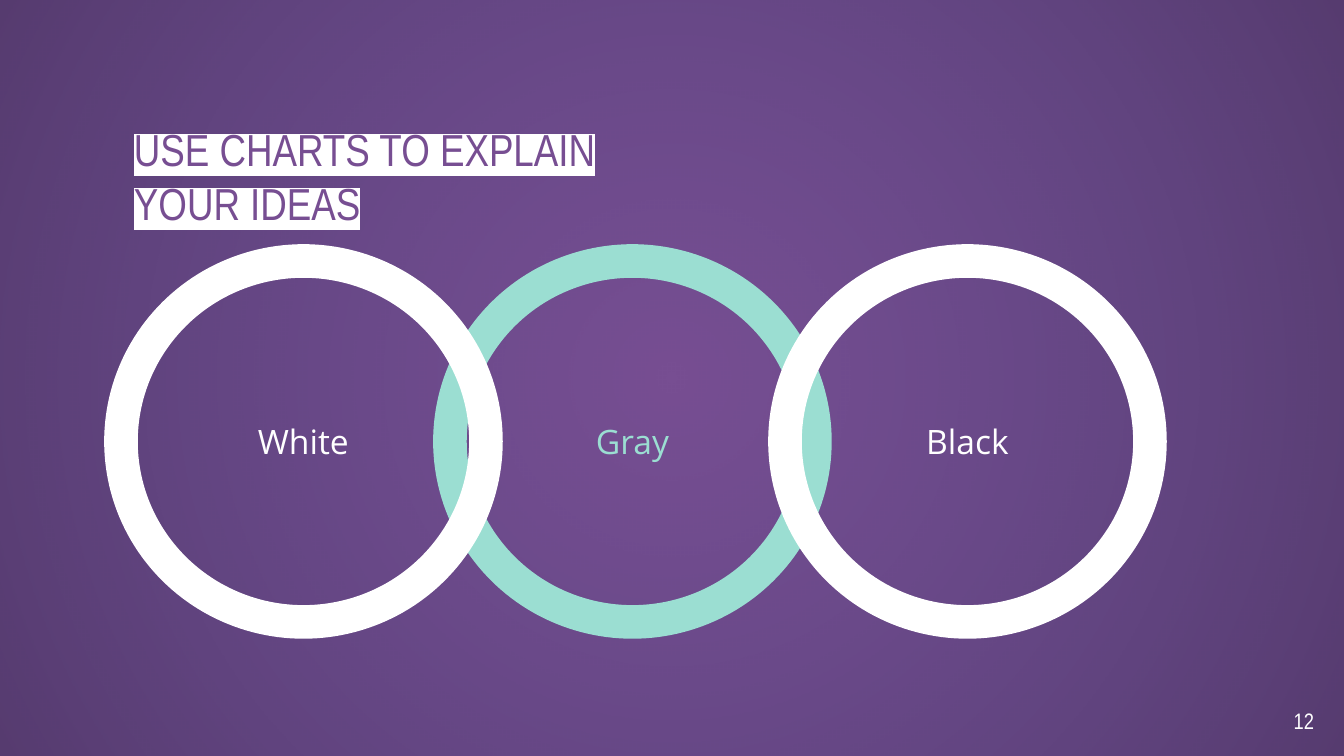
from dataclasses import dataclass

from lxml import etree
from pptx import Presentation
from pptx.dml.color import RGBColor
from pptx.enum.shapes import MSO_SHAPE
from pptx.enum.text import MSO_ANCHOR, PP_ALIGN
from pptx.oxml import parse_xml
from pptx.oxml.ns import nsdecls, qn
from pptx.util import Pt

RECTANGLE, OVAL = MSO_SHAPE.RECTANGLE, MSO_SHAPE.OVAL
TOP, MIDDLE = MSO_ANCHOR.TOP, MSO_ANCHOR.MIDDLE
LEFT, CENTER, RIGHT = PP_ALIGN.LEFT, PP_ALIGN.CENTER, PP_ALIGN.RIGHT

EMU_PER_PX = 914400 / 134.4
SLIDE_WIDTH, SLIDE_HEIGHT = 1344, 756


@dataclass(frozen=True)
class Theme:
    purple: str = "774E92"
    white: str = "FFFFFF"
    mint: str = "9BDED2"
    vignette_center: str = "073763"
    vignette_edge: str = "010B15"
    heading_font: str = "Arial Narrow"
    body_font: str = "Open Sans"
    title_size: int = 24
    label_size: int = 18
    number_size: int = 12
    ring_width: int = 18


THEME = Theme()


def px(length):
    return round(length * EMU_PER_PX)


def emu_box(box):
    return [px(length) for length in box]


def write_text(shape, text, font, size, color, align=LEFT, anchor=TOP):
    """Fill the shape with one formatted paragraph and return the paragraph."""
    frame = shape.text_frame
    frame.text = text
    frame.word_wrap = True
    frame.vertical_anchor = anchor
    frame.margin_left = frame.margin_right = px(13)
    frame.margin_top = frame.margin_bottom = px(13)
    paragraph = frame.paragraphs[0]
    paragraph.alignment = align
    run_font = paragraph.runs[0].font
    run_font.name = font
    run_font.size = Pt(size)
    run_font.color.rgb = RGBColor.from_string(color)
    return paragraph


def add_background(slide, box):
    fill = slide.background.fill
    fill.solid()
    fill.fore_color.rgb = RGBColor.from_string(THEME.purple)

    # Vignette: clear in the center, darker towards the corners
    vignette = slide.shapes.add_shape(RECTANGLE, *emu_box(box))
    vignette.shadow.inherit = False
    vignette.line.fill.background()
    gradient = parse_xml(
        f'<a:gradFill {nsdecls("a")} rotWithShape="1"><a:gsLst>'
        f'<a:gs pos="0"><a:srgbClr val="{THEME.vignette_center}">'
        '<a:alpha val="0"/></a:srgbClr></a:gs>'
        f'<a:gs pos="100000"><a:srgbClr val="{THEME.vignette_edge}">'
        '<a:alpha val="28000"/></a:srgbClr></a:gs></a:gsLst>'
        '<a:path path="circle">'
        '<a:fillToRect l="50000" t="50000" r="50000" b="50000"/>'
        '</a:path></a:gradFill>')
    vignette._element.spPr.find(qn("a:prstGeom")).addnext(gradient)


def add_title(slide, box, text):
    title = slide.shapes.add_textbox(*emu_box(box))
    paragraph = write_text(title, text, THEME.heading_font,
                           THEME.title_size, THEME.purple)
    paragraph.line_spacing = 1.0

    # Highlight behind the words; it must come before the typeface
    typeface = paragraph.runs[0].font._element.find(qn("a:latin"))
    highlight = etree.Element(qn("a:highlight"))
    etree.SubElement(highlight, qn("a:srgbClr"), val=THEME.white)
    typeface.addprevious(highlight)


def add_ring(slide, box, label, color):
    ring = slide.shapes.add_shape(OVAL, *emu_box(box))
    ring.shadow.inherit = False
    ring.fill.background()
    ring.line.color.rgb = RGBColor.from_string(color)
    ring.line.width = Pt(THEME.ring_width)
    write_text(ring, label, THEME.body_font, THEME.label_size, color,
               CENTER, MIDDLE)


def add_rings(slide, box):
    left, top, width, height = box
    ring_width = 365
    # The middle ring lies behind its neighbours
    for offset, label, color in (
            (329, "Gray", THEME.mint),
            (0, "White", THEME.white),
            (width - ring_width, "Black", THEME.white)):
        add_ring(slide, (left + offset, top, ring_width, height), label, color)


def add_slide_number(slide, box, number):
    number_box = slide.shapes.add_textbox(*emu_box(box))
    write_text(number_box, number, THEME.heading_font, THEME.number_size,
               THEME.white, RIGHT)


def main():
    presentation = Presentation()
    presentation.slide_width = px(SLIDE_WIDTH)
    presentation.slide_height = px(SLIDE_HEIGHT)
    slide = presentation.slides.add_slide(presentation.slide_layouts[6])

    add_background(slide, (0, 0, SLIDE_WIDTH, SLIDE_HEIGHT))
    add_title(slide, (121, 109, 603, 103), "USE CHARTS TO EXPLAIN YOUR IDEAS")
    add_rings(slide, (121, 261, 1029, 361))
    add_slide_number(slide, (1246, 694, 81, 51), "12")

    presentation.save("out.pptx")


if __name__ == "__main__":
    main()
